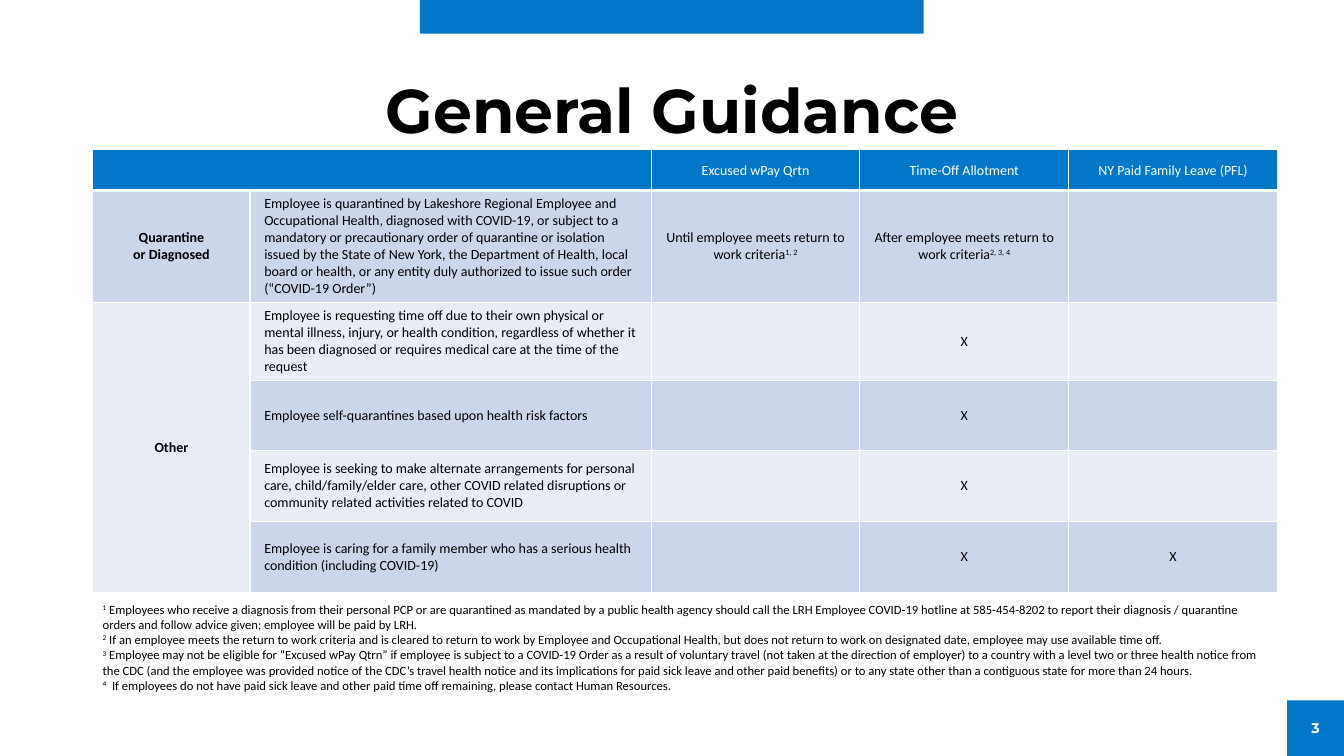
from pptx import Presentation
from pptx.dml.color import RGBColor
from pptx.enum.shapes import MSO_SHAPE
from pptx.enum.text import MSO_ANCHOR, PP_ALIGN
from pptx.oxml import parse_xml
from pptx.oxml.ns import nsdecls
from pptx.util import Cm, Pt

COLORS = {"blue": "0077C8", "band": "CCD6EB", "pale": "E7ECF5",
          "black": "000000", "white": "FFFFFF"}
FORMATS = {
    "title": {"name": "Montserrat", "size": Pt(44), "bold": True},
    "number": {"name": "Montserrat", "size": Pt(10), "bold": True},
    "cell": {"name": "Calibri", "size": Pt(10), "bold": False},
    "label": {"name": "Calibri", "size": Pt(10), "bold": True},
    "note": {"name": "Calibri", "size": Pt(9), "bold": False},
}
HEADER = ["", "", "Excused wPay Qrtn", "Time-Off Allotment", "NY Paid Family Leave (PFL)"]
GUIDANCE = [
    ["Quarantine\nor Diagnosed",
     "Employee is quarantined by Lakeshore Regional Employee and Occupational Health, "
     "diagnosed with COVID-19, or subject to a mandatory or precautionary order of "
     "quarantine or isolation issued by the State of New York, the Department of Health, "
     "local board or health, or any entity duly authorized to issue such order "
     "(“COVID-19 Order”)",
     "Until employee meets return to work criteria^1, 2^",
     "After employee meets return to work criteria^2, 3, 4^", ""],
    ["Other",
     "Employee is requesting time off due to their own physical or mental illness, injury, "
     "or health condition, regardless of whether it has been diagnosed or requires medical "
     "care at the time of the request", "", "X", ""],
    ["", "Employee self-quarantines based upon health risk factors", "", "X", ""],
    ["", "Employee is seeking to make alternate arrangements for personal care, "
     "child/family/elder care, other COVID related disruptions or community related "
     "activities related to COVID", "", "X", ""],
    ["", "Employee is caring for a family member who has a serious health condition "
     "(including COVID-19)", "", "X", "X"],
]
NOTES = [
    "^1^ Employees who receive a diagnosis from their personal PCP or are quarantined as "
    "mandated by a public health agency should call the LRH Employee COVID-19 hotline at "
    "585-454-8202 to report their diagnosis / quarantine orders and follow advice given; "
    "employee will be paid by LRH.",
    "^2^ If an employee meets the return to work criteria and is cleared to return to work "
    "by Employee and Occupational Health, but does not return to work on designated date, "
    "employee may use available time off.",
    "^3^ Employee may not be eligible for “Excused wPay Qtrn” if employee is subject to a "
    "COVID-19 Order as a result of voluntary travel (not taken at the direction of employer) "
    "to a country with a level two or three health notice from the CDC (and the employee was "
    "provided notice of the CDC’s travel health notice and its implications for paid sick "
    "leave and other paid benefits) or to any state other than a contiguous state for more "
    "than 24 hours.",
    "^4^  If employees do not have paid sick leave and other paid time off remaining, please "
    "contact Human Resources.",
]
COLUMNS = [3.96, 10.11, 5.26, 5.26, 5.26]
ROWS = [1.04, 2.82, 1.96, 1.78, 1.78, 1.78]


def rgb(color):
    return RGBColor.from_string(COLORS[color])


class SlideBuilder:
    def __init__(self, prs):
        self.slide = prs.slides.add_slide(prs.slide_layouts[6])

    def fill_text(self, tf, text, fmt, color="black", align=PP_ALIGN.LEFT, spacing=1.0):
        for i, line in enumerate(text.split("\n")):
            p = tf.paragraphs[0] if i == 0 else tf.add_paragraph()
            p.alignment = align
            p.line_spacing = spacing
            for j, part in enumerate(line.split("^")):
                if not part:
                    continue
                r = p.add_run()
                r.text = part
                for key, value in FORMATS[fmt].items():
                    setattr(r.font, key, value)
                r.font.color.rgb = rgb(color)
                if j % 2:
                    r._r.get_or_add_rPr().set("baseline", "30000")

    def rect(self, box, color):
        sp = self.slide.shapes.add_shape(MSO_SHAPE.RECTANGLE, *map(Cm, box))
        sp.shadow.inherit = False
        sp.fill.solid()
        sp.fill.fore_color.rgb = rgb(color)
        sp.line.fill.background()

    def text(self, box, text, fmt, anchor=MSO_ANCHOR.MIDDLE, **style):
        tf = self.slide.shapes.add_textbox(*map(Cm, box)).text_frame
        tf.word_wrap = True
        tf.vertical_anchor = anchor
        self.fill_text(tf, text, fmt, **style)

    def cell(self, cell, fill, bottom, margins):
        tcPr = cell._tc.get_or_add_tcPr()
        for side, width in {"L": 1, "R": 1, "T": 1, "B": bottom}.items():
            tcPr.append(parse_xml(
                f'<a:ln{side} {nsdecls("a")} w="{Pt(width)}"><a:solidFill>'
                f'<a:srgbClr val="{COLORS["white"]}"/></a:solidFill></a:ln{side}>'))
        cell.fill.solid()
        cell.fill.fore_color.rgb = rgb(fill)
        cell.vertical_anchor = MSO_ANCHOR.MIDDLE
        for side, margin in zip(("left", "top", "right", "bottom"), margins):
            setattr(cell, f"margin_{side}", Cm(margin))

    def table(self, left, top, columns, rows, values):
        table = self.slide.shapes.add_table(
            len(rows), len(columns), Cm(left), Cm(top),
            Cm(sum(columns)), Cm(sum(rows))).table
        for column, width in zip(table.columns, columns):
            column.width = Cm(width)
        for row, height in zip(table.rows, rows):
            row.height = Cm(height)
        for i, line in enumerate(values):
            head = i == 0
            fill = "blue" if head else "band" if i % 2 else "pale"
            margins = (0.36, 0.03, 0.36, 0) if head else (0.36, 0.13, 0.36, 0.13)
            for j, value in enumerate(line):
                cell = table.cell(i, j)
                self.cell(cell, fill, 3 if head else 1, margins)
                self.fill_text(cell.text_frame, value,
                               "label" if j == 0 else "cell",
                               "white" if head else "black",
                               PP_ALIGN.LEFT if j == 1 else PP_ALIGN.CENTER)
        table.cell(0, 0).merge(table.cell(0, 1))
        table.cell(2, 0).merge(table.cell(5, 0))


def main():
    prs = Presentation()
    prs.slide_width, prs.slide_height = Cm(33.87), Cm(19.05)
    s = SlideBuilder(prs)
    s.rect((32.44, 17.65, 1.43, 1.4), "blue")
    s.rect((10.58, 0, 12.7, 0.85), "blue")
    s.text((2.34, 1.02, 29.21, 3.68), "General Guidance", "title",
           align=PP_ALIGN.CENTER, spacing=0.9)
    s.table(2.34, 3.76, COLUMNS, ROWS, [HEADER] + GUIDANCE)
    s.text((32.44, 17.83, 1.43, 1.02), "3", "number", color="white",
           align=PP_ALIGN.CENTER)
    s.text((2.34, 15.04, 29.85, 3), "\n".join(NOTES), "note", anchor=MSO_ANCHOR.TOP)
    prs.save("out.pptx")


if __name__ == "__main__":
    main()
